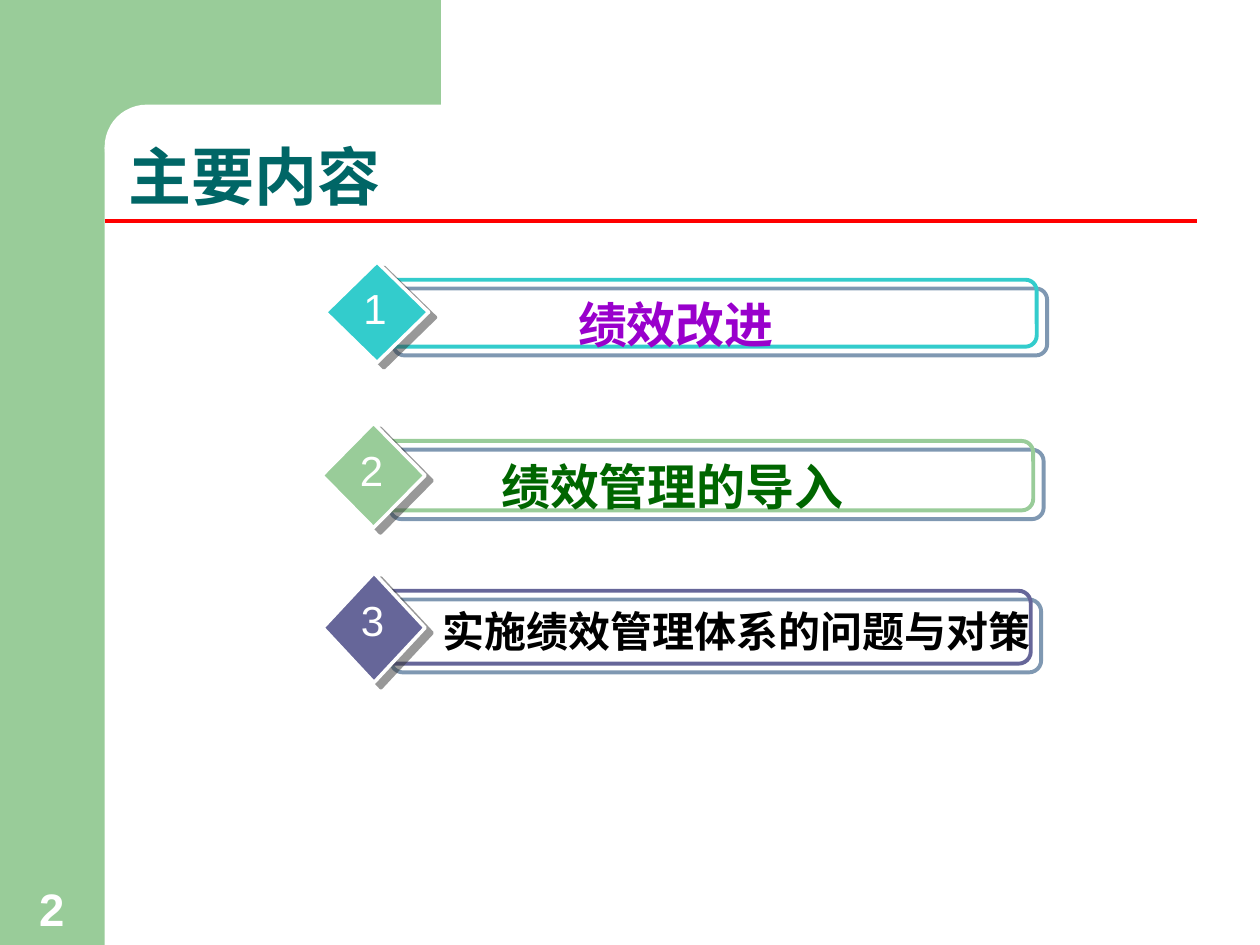
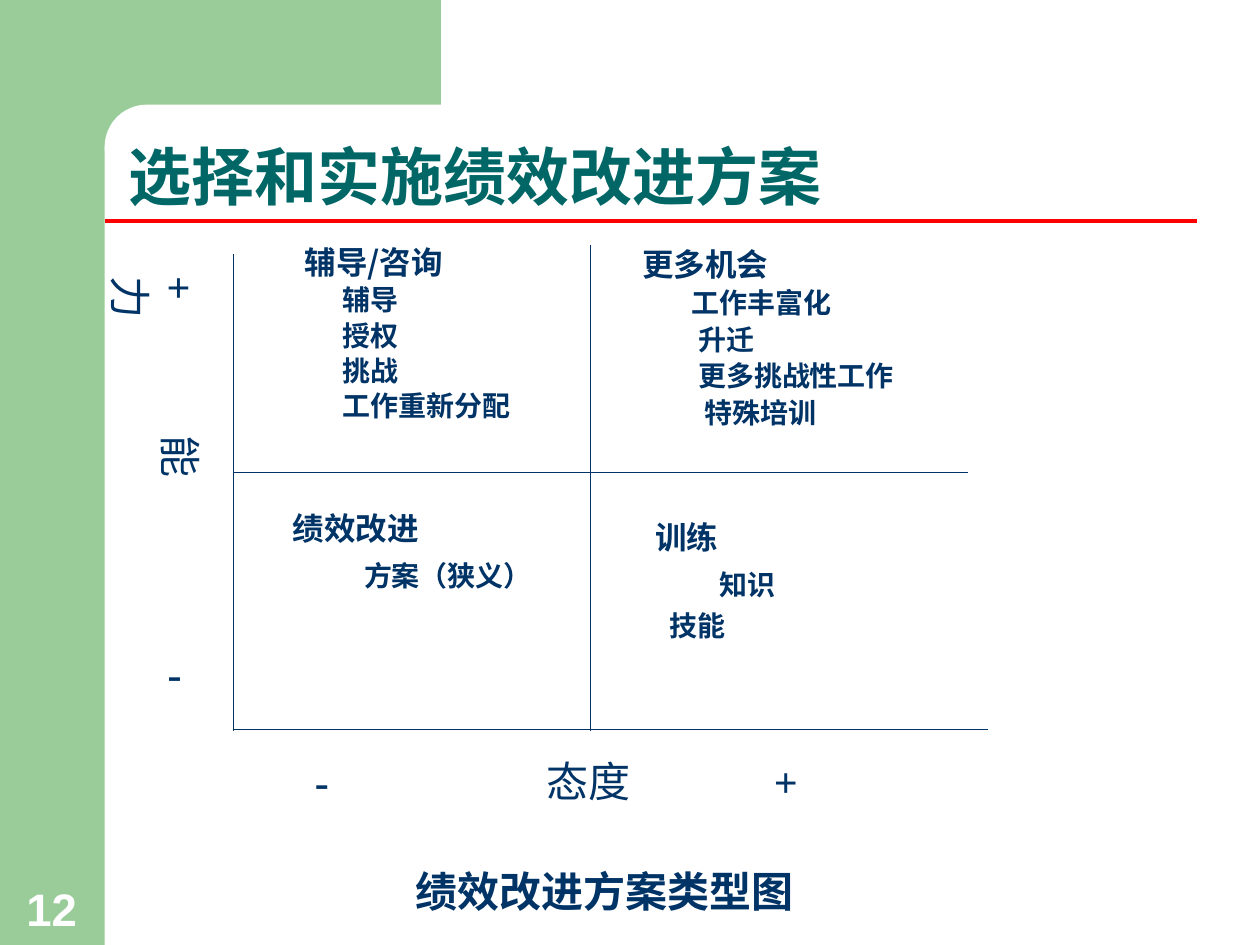
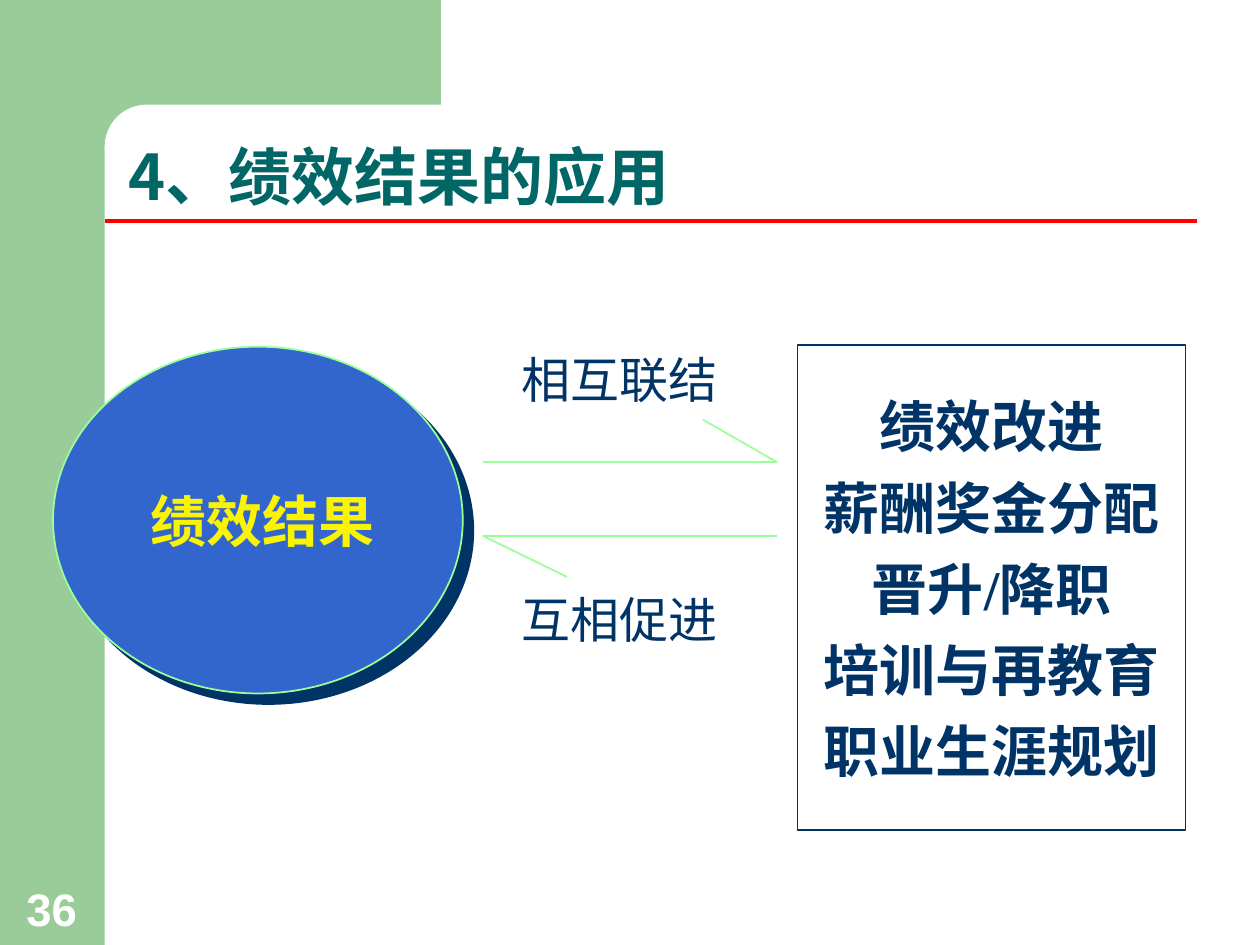
from dataclasses import dataclass
from lxml.etree import SubElement
from pptx import Presentation
from pptx.dml.color import RGBColor
from pptx.enum.shapes import MSO_CONNECTOR, MSO_SHAPE as SHAPE
from pptx.enum.text import MSO_ANCHOR as ANCHOR, PP_ALIGN as ALIGN
from pptx.oxml.ns import qn
from pptx.util import Cm, Pt


@dataclass(frozen=True)
class Theme:
    green: str = "99CC99"
    white: str = "FFFFFF"
    black: str = "000000"
    red: str = "FF0000"
    teal: str = "006666"
    navy: str = "003366"
    aqua: str = "33CCCC"
    slate: str = "666699"
    purple: str = "9900CC"
    forest: str = "006600"
    blue: str = "3366CC"
    lime: str = "99FF99"
    yellow: str = "FAF400"
    grey: str = "333333"
    title: int = 36
    large: int = 32
    label: int = 28
    number: int = 26
    medium: int = 24
    heading: int = 18
    item: int = 16
    sans: str = "Arial"
    serif: str = "Times New Roman"
    cjk: str = "Noto Sans CJK SC"


T = Theme()


def rgb(color):
    return RGBColor.from_string(color)


def write(tf, text, size=T.medium, color=T.navy, font=T.serif, bold=False,
          align=None, spacing=None, before=0, indent=0, tabs=()):
    p = tf.paragraphs[0]
    if p.runs:
        p = tf.add_paragraph()
        p.space_before = Pt(before)
    p.alignment = align
    if spacing:
        p.line_spacing = spacing
    pPr = p._p.get_or_add_pPr()
    if indent:
        pPr.set("marL", str(Cm(indent)))
        pPr.set("indent", "0")
    if tabs:
        tab_list = SubElement(pPr, qn("a:tabLst"))
        for pos in tabs:
            SubElement(tab_list, qn("a:tab"), pos=str(Cm(pos)), algn="l")
    parts = [(text, bold)] if isinstance(text, str) else text
    for part, is_bold in parts:
        r = p.add_run()
        r.text = part
        r.font.size = Pt(size)
        r.font.bold = is_bold
        r.font.color.rgb = rgb(color)
        r.font.name = font
        SubElement(r._r.get_or_add_rPr(), qn("a:ea"), typeface=T.cjk)


class Deck:
    def __init__(self):
        self.prs = Presentation()
        self.prs.slide_width, self.prs.slide_height = Cm(25.4), Cm(19.05)
        self.slide = None

    def new_slide(self, title, number, title_font=T.sans):
        self.slide = self.prs.slides.add_slide(self.prs.slide_layouts[6])
        self.shape(SHAPE.RECTANGLE, 0, 0, 2.11, 19.05, fill=T.green)
        self.shape(SHAPE.RECTANGLE, 1.9, 0, 6.99, 2.97, fill=T.green)
        sp = self.shape(SHAPE.ROUNDED_RECTANGLE, 2.11, 2.11, 14.17, 1.7, fill=T.white)
        sp.adjustments[0] = 0.5
        self.line(2.11, 4.45, 24.13, 4.45, T.red, 2.25)
        tf = self.text(0.23, 17.63, 1.63, 1.35, ANCHOR.BOTTOM)
        write(tf, str(number), T.number, T.white, T.sans, True, ALIGN.CENTER)
        tf = self.text(2.34, 1.27, 18.62, 3.18, ANCHOR.BOTTOM)
        write(tf, title, T.title, T.teal, title_font, True, spacing=0.9)

    def shape(self, kind, x, y, w, h, fill=None, line=None, width=1, shadow=None):
        sp = self.slide.shapes.add_shape(kind, Cm(x), Cm(y), Cm(w), Cm(h))
        sp.shadow.inherit = False
        if fill:
            sp.fill.solid()
            sp.fill.fore_color.rgb = rgb(fill)
        else:
            sp.fill.background()
        if line:
            sp.line.color.rgb = rgb(line)
            sp.line.width = Pt(width)
        else:
            sp.line.fill.background()
        if shadow:
            self.cast_shadow(sp, *shadow)
        return sp

    def cast_shadow(self, sp, color, alpha, distance, angle):
        effects = sp._element.spPr.find(qn("a:effectLst"))
        outer = SubElement(effects, qn("a:outerShdw"), dist=str(Pt(distance)),
                           dir=str(angle * 60000), algn="ctr", rotWithShape="0")
        clr = SubElement(outer, qn("a:srgbClr"), val=color)
        SubElement(clr, qn("a:alpha"), val=str(alpha * 1000))

    def line(self, x1, y1, x2, y2, color, width):
        cx = self.slide.shapes.add_connector(
            MSO_CONNECTOR.STRAIGHT, Cm(x1), Cm(y1), Cm(x2), Cm(y2))
        cx.line.color.rgb = rgb(color)
        cx.line.width = Pt(width)
        SubElement(cx._element.spPr, qn("a:effectLst"))

    def text(self, x, y, w, h, anchor=ANCHOR.TOP, wrap=True, vertical=False):
        tf = self.slide.shapes.add_textbox(Cm(x), Cm(y), Cm(w), Cm(h)).text_frame
        tf.word_wrap = wrap
        tf.vertical_anchor = anchor
        if vertical:
            tf._txBody.bodyPr.set("vert", "vert")
        return tf

    def agenda_item(self, number, label, x, y, bar, diamond, accent, label_width, **fmt):
        bar_w, bar_h = bar
        self.shape(SHAPE.ROUNDED_RECTANGLE, x, y, bar_w, bar_h, line=accent,
                   width=2.25, shadow=(T.navy, 50, 7.8, 40))
        self.shape(SHAPE.DIAMOND, x - 1.16, y - 0.36, *diamond, fill=accent,
                   line=T.white, width=2, shadow=(T.grey, 50, 5, 37))
        tf = self.text(x + 0.7, y + 0.18, label_width, 1.4)
        write(tf, label, bold=True, align=ALIGN.CENTER, **fmt)
        tf = self.text(x - 0.65, y - 0.06, 0.98, 1.27, wrap=False)
        write(tf, str(number), T.medium, T.white, T.sans, align=ALIGN.CENTER)

    def quadrant(self, x, y, w, h, heading, items, indent=0, spacing=None,
                 font=T.serif):
        tf = self.text(x, y, w, h)
        write(tf, heading, T.heading, font=font, bold=True, indent=indent,
              spacing=spacing)
        for item, item_indent, before in items:
            write(tf, item, T.item, font=font, bold=True, indent=item_indent,
                  spacing=spacing, before=before)


def agenda(deck):
    deck.new_slide("主要内容", 2)
    deck.agenda_item(1, "绩效改进", 7.72, 5.64, (13.18, 1.35), (2.08, 2.03),
                     T.aqua, 10.41, size=T.label, color=T.purple, font=T.sans)
    deck.agenda_item(2, "绩效管理的导入", 7.65, 8.89, (13.18, 1.4), (2.08, 2.11),
                     T.green, 10.41, size=T.label, color=T.forest, font=T.sans)
    deck.agenda_item(3, "实施绩效管理体系的问题与对策", 7.67, 11.91, (13.11, 1.47),
                     (2.06, 2.21), T.slate, 12.95, color=T.black)


def plan_types(deck):
    deck.new_slide("选择和实施绩效改进方案", 12)
    left, middle, bottom, centre = 4.7, 11.91, 14.71, 9.53
    for ends in ((left, 5.13, left, 14.73), (left, bottom, 19.91, bottom),
                 (left, centre, 19.51, centre), (middle, 4.93, middle, 14.73)):
        deck.line(*ends, T.navy, 0.75)

    coaching = [(item, 0.77, 4.8) for item in ("辅导", "授权", "挑战", "工作重新分配")]
    deck.quadrant(5.89, 4.93, 5.99, 4.39, "辅导/咨询", coaching, spacing=0.8,
                  font=T.cjk)
    deck.quadrant(12.7, 4.93, 7.21, 4.57, "更多机会",
                  [("工作丰富化", 1, 4.6), ("升迁", 1.13, 4.6),
                   ("更多挑战性工作", 1.13, 4.6), ("特殊培训", 1.25, 4.6)], spacing=0.85)
    deck.quadrant(5.11, 10.13, 6.6, 2.16, "绩效改进", [("方案（狭义）", 1.98, 7)],
                  indent=0.54, font=T.cjk)
    deck.quadrant(12.09, 10.31, 6.6, 3.18, "训练",
                  [("知识", 2.16, 7), ("技能", 1.15, 4.2)], indent=0.87)

    tf = deck.text(6.1, 15.11, 12.6, 1.27)
    write(tf, [("-\t", True), ("态度\t", False), ("+", True)], tabs=(4.67, 9.25))
    tf = deck.text(2.77, 5.33, 1.52, 5.21, vertical=True)
    write(tf, [("+\t", True), ("能力", False)], tabs=(3.2,))
    tf = deck.text(2.49, 12.93, 1.8, 1.27)
    write(tf, "-", bold=True, indent=0.64)
    tf = deck.text(5.49, 17.32, 13.41, 1.27)
    write(tf, "绩效改进方案类型图", bold=True, align=ALIGN.CENTER)


def result_uses(deck):
    deck.new_slide("4、绩效结果的应用", 36, title_font=T.cjk)
    deck.shape(SHAPE.OVAL, 1.07, 6.99, 8.26, 6.99, fill=T.blue, line=T.lime,
               shadow=(T.navy, 100, 8.5, 45))
    tf = deck.text(1.07, 9.68, 8.46, 1.6, ANCHOR.MIDDLE)
    write(tf, "绩效结果", T.large, T.yellow, bold=True, align=ALIGN.CENTER)

    start, end, upper, lower = 9.73, 15.67, 9.32, 10.8
    for ends in ((start, upper, end, upper), (14.17, 8.46, end, upper),
                 (start, lower, end, lower), (start, lower, 11.43, 11.63)):
        deck.line(*ends, T.lime, 1)

    sp = deck.shape(SHAPE.RECTANGLE, 16.08, 6.96, 7.82, 9.78, line=T.navy)
    sp.text_frame.word_wrap = True
    sp.text_frame.vertical_anchor = ANCHOR.MIDDLE
    for use in ("绩效改进", "薪酬奖金分配", "晋升/降职", "培训与再教育", "职业生涯规划"):
        write(sp.text_frame, use, T.large, bold=True, align=ALIGN.CENTER, before=8)

    for label, x, y, w in (("相互联结", 9.53, 6.91, 5.92), ("互相促进", 9.73, 11.76, 5.51)):
        tf = deck.text(x, y, w, 1.45, ANCHOR.MIDDLE)
        write(tf, label, T.label, align=ALIGN.CENTER)


def main():
    deck = Deck()
    agenda(deck)
    plan_types(deck)
    result_uses(deck)
    deck.prs.save("out.pptx")


if __name__ == "__main__":
    main()
